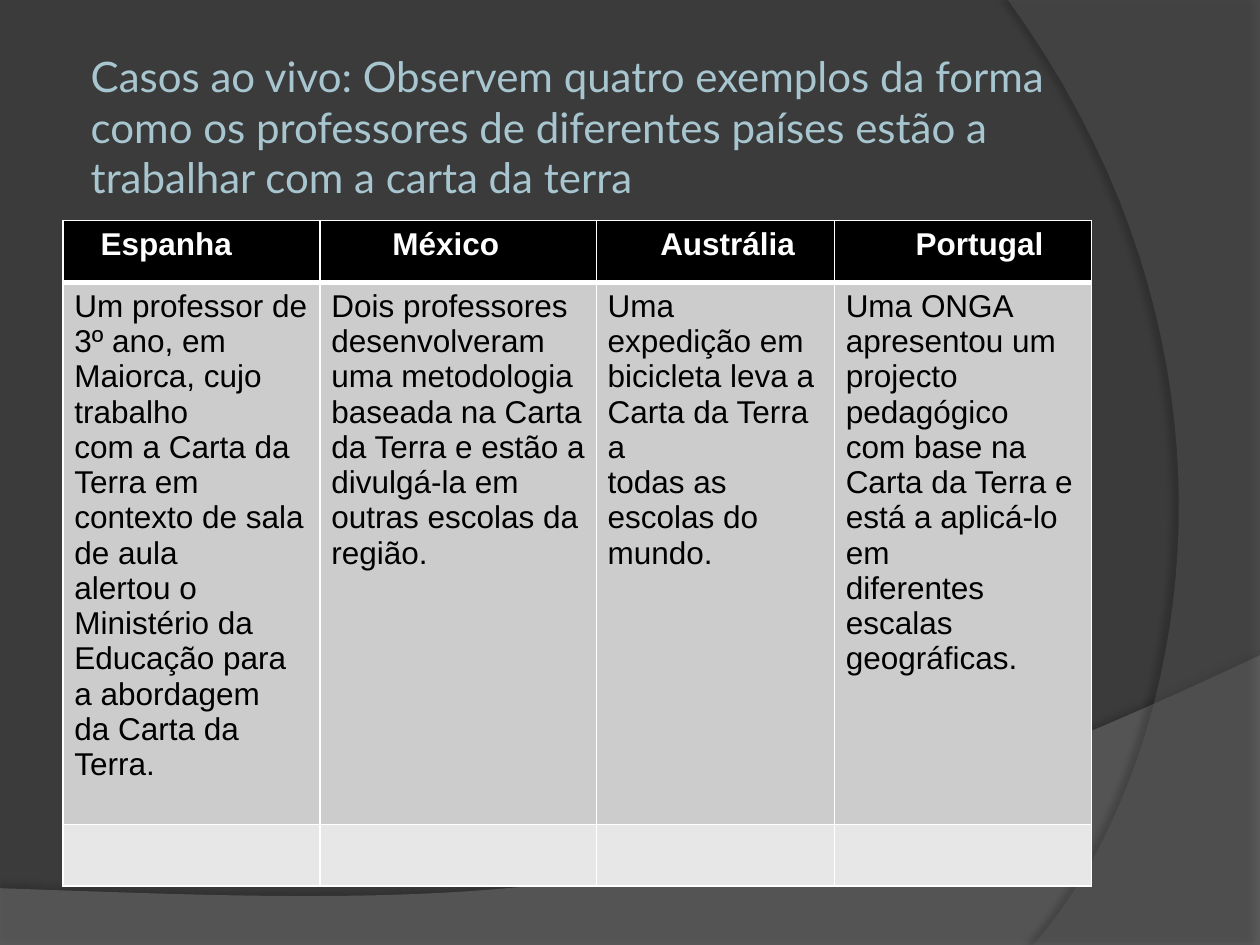
from lxml.etree import SubElement
from pptx import Presentation
from pptx.dml.color import RGBColor
from pptx.enum.text import MSO_ANCHOR
from pptx.oxml.ns import qn
from pptx.util import Cm, Pt

BACKGROUND = RGBColor(0x3B, 0x3B, 0x3B)
LOWER_WAVE = RGBColor(0x7F, 0x7F, 0x7F)
RIGHT_WAVE = RGBColor(0x5E, 0x5E, 0x5E)
TITLE_BLUE = RGBColor(0xA8, 0xC6, 0xD0)
BLACK = RGBColor(0x00, 0x00, 0x00)
WHITE = RGBColor(0xFF, 0xFF, 0xFF)
BODY_GREY = RGBColor(0xCC, 0xCC, 0xCC)
PALE_GREY = RGBColor(0xE7, 0xE7, 0xE7)

TITLE = ("Casos ao vivo: Observem quatro exemplos da forma como os professores "
         "de diferentes países estão a trabalhar com a carta da terra")

# Country, heading indent (cm), column width (cm), paragraphs
CASES = [
    ("Espanha", 0.53, 5.18, [
        "Um professor de 3º ano, em Maiorca, cujo trabalho",
        "com a Carta da Terra em contexto de sala de aula",
        "alertou o Ministério da Educação para a abordagem",
        "da Carta da Terra."]),
    ("México", 1.23, 5.57, [
        "Dois professores desenvolveram uma metodologia",
        "baseada na Carta da Terra e estão a divulgá-la em",
        "outras escolas da região."]),
    ("Austrália", 1.06, 4.8, [
        "Uma expedição em bicicleta leva a Carta da Terra a",
        "todas as escolas do mundo."]),
    ("Portugal", 1.41, 5.18, [
        "Uma ONGA apresentou um projecto pedagógico",
        "com base na Carta da Terra e está a aplicá-lo em",
        "diferentes escalas geográficas."]),
]
ROW_HEIGHTS = (1.24, 9.83, 1.24)


def set_all(target, values):
    for name, value in values.items():
        setattr(target, name, value)


def format_text(text_frame, font_format):
    for paragraph in text_frame.paragraphs:
        for run in paragraph.runs:
            set_all(run.font, {key: value for key, value in font_format.items() if key != "color"})
            run.font.color.rgb = font_format["color"]


def bezier(start, first, second, end, steps=40):
    """Points along a cubic curve, without its start."""
    points = []
    for step in range(1, steps + 1):
        t = step / steps
        weights = ((1 - t) ** 3, 3 * t * (1 - t) ** 2, 3 * t * t * (1 - t), t ** 3)
        points.append(tuple(sum(w * p[axis] for w, p in zip(weights, (start, first, second, end)))
                            for axis in (0, 1)))
    return points


def add_wave(slide, box, corners, curve, color, opacity, shadow):
    """Translucent wave; corners and curve are fractions of the box."""
    left, top, width, height = box
    points = [(left + x * width, top + y * height)
              for x, y in corners + bezier(corners[-1], *curve)]
    builder = slide.shapes.build_freeform(*points[0])
    builder.add_line_segments(points[1:], close=True)
    shape = builder.convert_to_shape()
    shape.fill.solid()
    shape.fill.fore_color.rgb = color
    shape.line.fill.background()
    shape.shadow.inherit = False

    # Transparency and outer shadow
    properties = shape.element.spPr
    fill_color = properties.find(qn("a:solidFill")).find(qn("a:srgbClr"))
    SubElement(fill_color, qn("a:alpha"), val=str(opacity * 1000))
    shadow_opacity, blur, distance, angle = shadow
    outer = SubElement(properties.find(qn("a:effectLst")), qn("a:outerShdw"),
                       blurRad=str(Pt(blur)), dist=str(Pt(distance)),
                       dir=str(angle * 60000), algn="ctr", rotWithShape="0")
    shadow_color = SubElement(outer, qn("a:srgbClr"), val=str(BLACK))
    SubElement(shadow_color, qn("a:alpha"), val=str(shadow_opacity * 1000))


def add_backdrop(slide):
    slide.background.fill.solid()
    slide.background.fill.fore_color.rgb = BACKGROUND
    add_wave(slide, (0, Cm(13.21), Cm(25.4), Cm(5.87)),
             [(0, 0.8), (0, 1), (1, 1), (1, 0)],
             [(0.56, 0.9), (0.39, 0.86), (0, 0.8)],
             LOWER_WAVE, 45, (35, 4, 3.5, 270))
    add_wave(slide, (Cm(20.32), 0, Cm(5.08), Cm(19.05)),
             [(0, 0), (1, 0), (1, 1), (0.1, 1)],
             [(0.67, 0.83), (1.09, 0.4), (0, 0)],
             RIGHT_WAVE, 40, (45, 4, 4, 180))


def add_title(slide, box):
    text_frame = slide.shapes.add_textbox(*box).text_frame
    set_all(text_frame, {"word_wrap": True, "vertical_anchor": MSO_ANCHOR.MIDDLE,
                         **{f"margin_{side}": Cm(0.13)
                            for side in ("left", "top", "right", "bottom")}})
    text_frame.text = TITLE
    format_text(text_frame, {"name": "Lato", "size": Pt(24), "color": TITLE_BLUE})


def add_borders(cell, widths):
    properties = cell._tc.get_or_add_tcPr()
    for side, width in widths.items():
        line = SubElement(properties, qn(f"a:ln{side}"), w=str(Pt(width)))
        fill = SubElement(line, qn("a:solidFill"))
        SubElement(fill, qn("a:srgbClr"), val=str(WHITE))


def fill_cell(cell, text, fill, font_color, bold, borders):
    add_borders(cell, borders)
    cell.fill.solid()
    cell.fill.fore_color.rgb = fill
    set_all(cell, {"margin_left": Cm(0.23), "margin_right": Cm(0.23),
                   "margin_top": Cm(0.13), "margin_bottom": Cm(0.13)})
    if text:
        cell.text_frame.text = text
        format_text(cell.text_frame, {"name": "Arial", "size": Pt(18),
                                      "bold": bold, "color": font_color})


def add_cases_table(slide, box):
    table = slide.shapes.add_table(len(ROW_HEIGHTS), len(CASES), *box).table
    set_all(table, {"first_row": False, "horz_banding": False})
    for row, height in zip(table.rows, ROW_HEIGHTS):
        row.height = Cm(height)
    thin = {"L": 1, "R": 1, "T": 1, "B": 1}
    for index, (country, indent, width, paragraphs) in enumerate(CASES):
        table.columns[index].width = Cm(width)
        heading = table.cell(0, index)
        fill_cell(heading, country, BLACK, WHITE, True, {**thin, "B": 3})
        heading.text_frame.paragraphs[0]._p.get_or_add_pPr().set("marL", str(Cm(indent)))
        fill_cell(table.cell(1, index), "\n".join(paragraphs), BODY_GREY, BLACK, False,
                  {**thin, "T": 3})
        fill_cell(table.cell(2, index), "", PALE_GREY, BLACK, False, thin)


def main():
    presentation = Presentation()
    set_all(presentation, {"slide_width": Cm(25.4), "slide_height": Cm(19.05)})
    slide = presentation.slides.add_slide(presentation.slide_layouts[6])
    add_backdrop(slide)
    add_title(slide, (Cm(1.7), Cm(0.64), Cm(20.52), Cm(3.81)))
    add_cases_table(slide, (Cm(1.27), Cm(4.45), Cm(20.73), Cm(12.31)))
    presentation.save("out.pptx")


if __name__ == "__main__":
    main()
